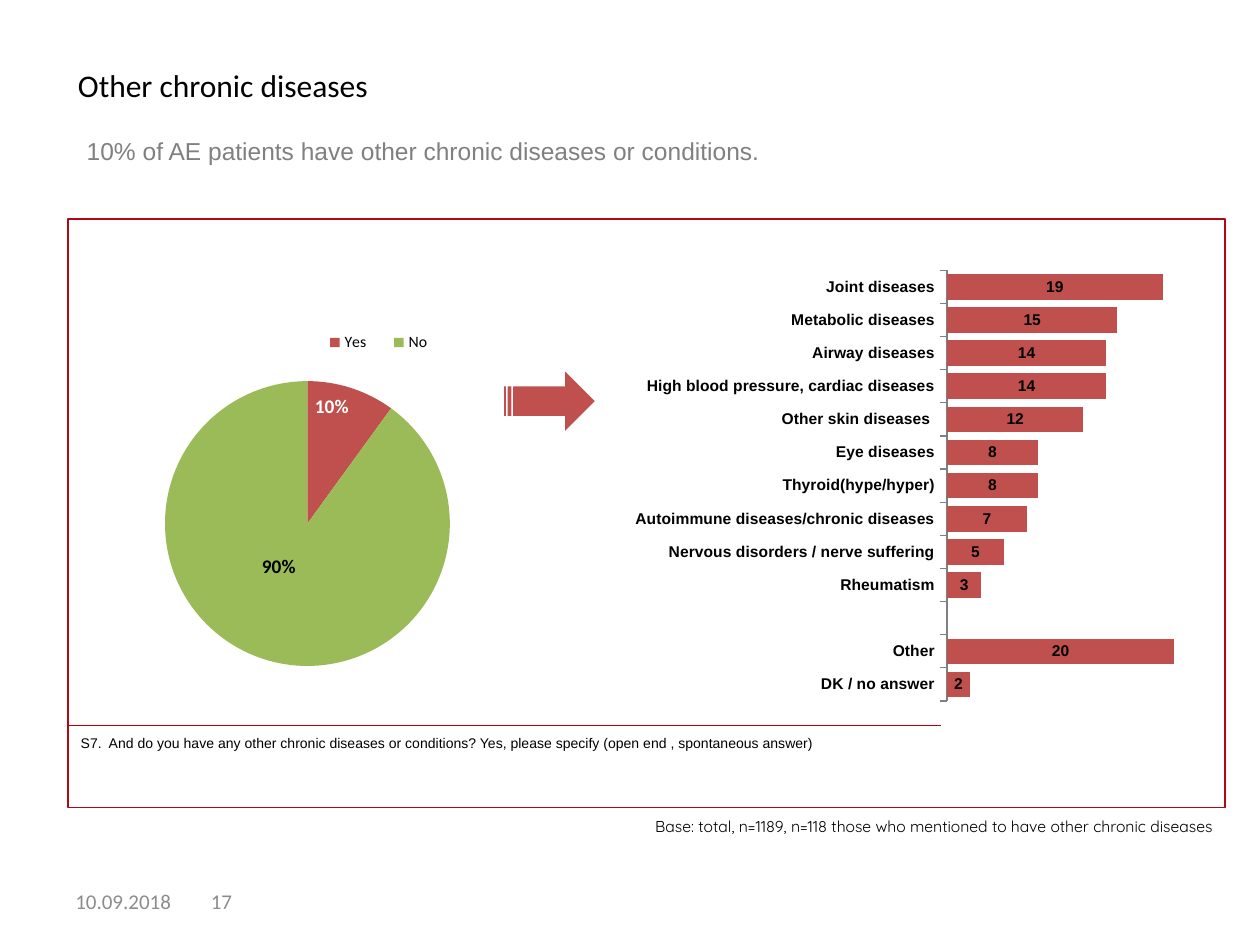
"""Build the slide on other chronic diseases: a pie of shares and a bar ranking."""
import pptx
import pptx.util
import pptx.chart.data
import pptx.dml.color
import pptx.enum.chart
import pptx.enum.shapes
import pptx.enum.text
import pptx.oxml
import pptx.oxml.ns

Pt = pptx.util.Pt
XL = pptx.enum.chart
SHAPE = pptx.enum.shapes
ALIGN = pptx.enum.text.PP_ALIGN
ANCHOR = pptx.enum.text.MSO_ANCHOR

COLORS = {"black": "000000", "white": "FFFFFF", "grey": "808080", "footer": "8C8C8C",
          "frame": "AE0917", "rule": "C00000", "red": "C0504D", "green": "9BBB59"}

HEADING = "Other chronic diseases"
MESSAGE = "10% of AE patients have other chronic diseases or conditions."
QUESTION = ("S7.  And do you have any other chronic diseases or conditions? "
            "Yes, please specify (open end , spontaneous answer)")
BASE = "Base: total, n=1189, n=118 those who mentioned to have other chronic diseases"
DATE, PAGE = "10.09.2018", "17"
HAS_OTHER = [("Yes", 0.1, "red", "white"), ("No", 0.9, "green", "black")]
DISEASES = [("Joint diseases", 19), ("Metabolic diseases", 15), ("Airway diseases", 14),
            ("High blood pressure, cardiac diseases", 14), ("Other skin diseases ", 12),
            ("Eye diseases", 8), ("Thyroid(hype/hyper)", 8),
            ("Autoimmune diseases/chronic diseases", 7),
            ("Nervous disorders / nerve suffering", 5), ("Rheumatism", 3),
            ("", None), ("Other", 20), ("DK / no answer", 2)]

deck = pptx.Presentation()
deck.slide_width, deck.slide_height = pptx.util.Inches(10), pptx.util.Inches(7.5)
slide = deck.slides.add_slide(deck.slide_layouts[6])


def area(*percents):
    """Turn left, top, width and height in percent of the slide into lengths."""
    sides = (deck.slide_width, deck.slide_height) * 2
    return [round(side * share / 100) for side, share in zip(sides, percents)]


def rgb(name):
    return pptx.dml.color.RGBColor.from_string(COLORS[name])


def style(font, size, color="black", face=None, bold=False):
    font.size, font.bold, font.color.rgb = Pt(size), bold, rgb(color)
    if face:
        font.name = face


def add_text(text, place, size, face="Calibri", color="black", align=ALIGN.LEFT,
             anchor=ANCHOR.TOP, inset=(7.2, 3.6), indent=0):
    frame = slide.shapes.add_textbox(*area(*place)).text_frame
    frame.word_wrap, frame.vertical_anchor = True, anchor
    frame.margin_left = frame.margin_right = Pt(inset[0])
    frame.margin_top = frame.margin_bottom = Pt(inset[1])
    line = frame.paragraphs[0]
    line.alignment = align
    if indent:
        line._p.get_or_add_pPr().set("marL", str(Pt(indent)))
    run = line.add_run()
    run.text = text
    style(run.font, size, color, face)


def add_chart(kind, place, rows, number_format, size, face, bold=False):
    data = pptx.chart.data.CategoryChartData(number_format=number_format)
    data.categories = [row[0] for row in rows]
    data.add_series("Series 1", [row[1] for row in rows])
    chart = slide.shapes.add_chart(kind, *area(*place), data).chart
    chart.has_title = chart.has_legend = False
    style(chart.font, size, face=face, bold=bold)
    return chart


def set_layout(parent, index, target=None, **shares):
    """Give a chart part a manual layout in shares of the chart."""
    for old in parent.findall(pptx.oxml.ns.qn("c:layout")):
        parent.remove(old)
    tags = f'<c:layoutTarget val="{target}"/>' if target else ""
    if "w" in shares:
        tags += '<c:xMode val="edge"/><c:yMode val="edge"/>'
    tags += "".join(f'<c:{key} val="{share}"/>' for key, share in shares.items())
    parent.insert(index, pptx.oxml.parse_xml(
        f'<c:layout {pptx.oxml.ns.nsdecls("c")}><c:manualLayout>{tags}'
        '</c:manualLayout></c:layout>'))


def find(chart, query):
    return chart.element.xpath(query)[0]


pie = add_chart(XL.XL_CHART_TYPE.PIE, (8.7, 30, 31.4, 43.07), HAS_OTHER, "0%", 18, "Calibri")
pie.has_legend = True
pie.legend.position, pie.legend.include_in_layout = XL.XL_LEGEND_POSITION.TOP, False
style(pie.legend.font, 9, face="Calibri")
shares = pie.plots[0].series[0]
labels = shares.data_labels
labels.show_value, labels.position = True, XL.XL_LABEL_POSITION.INSIDE_END
labels.number_format, labels.number_format_is_linked = "0%", False
style(labels.font, 11, face="Calibri", bold=True)
for number, (_, _, slice_color, label_color) in enumerate(HAS_OTHER):
    point = shares.points[number]
    point.format.fill.solid()
    point.format.fill.fore_color.rgb = rgb(slice_color)
    style(point.data_label.font, 11, label_color, "Calibri", True)
    point.data_label.position = XL.XL_LABEL_POSITION.INSIDE_END
set_layout(find(pie, ".//c:plotArea"), 0, "inner", x=0, y=0.24, w=1, h=0.7)
set_layout(find(pie, ".//c:legend"), 1, x=0.5, y=0.11, w=0.36, h=0.07)
set_layout(find(pie, ".//c:dLbl[c:idx/@val='1']"), 1, x=-0.01, y=-0.18)

add_text(PAGE, (14.2, 92.67, 5.2, 5.33), 12, color="footer", align=ALIGN.RIGHT,
         anchor=ANCHOR.MIDDLE)
border = slide.shapes.add_shape(SHAPE.MSO_SHAPE.RECTANGLE, *area(5.4, 23.2, 91.8, 62.27))
border.shadow.inherit = False
border.fill.background()
border.line.color.rgb, border.line.width = rgb("frame"), Pt(1)

add_text(HEADING, (5.2, 6.13, 89.8, 5.73), 18, align=ALIGN.JUSTIFY, anchor=ANCHOR.MIDDLE)
add_text(QUESTION, (5.2, 76.93, 75.1, 3.33), 8, "Arial", inset=(8.64, 4.32))
rule = slide.shapes.add_connector(SHAPE.MSO_CONNECTOR.STRAIGHT, *area(5.3, 76.8, 74.7, 76.8))
rule.line.color.rgb, rule.line.width = rgb("rule"), Pt(0.75)
rule._element.spPr.append(pptx.oxml.parse_xml(f'<a:effectLst {pptx.oxml.ns.nsdecls("a")}/>'))
add_text(MESSAGE, (5.4, 13.73, 89, 7.87), 14, "Arial", "grey", indent=3.6)
add_text(DATE, (5, 92.67, 23.3, 5.33), 12, color="footer", anchor=ANCHOR.MIDDLE)
add_text(BASE, (44.5, 85.6, 52.9, 3.6), 9, "Quicksand", align=ALIGN.RIGHT, inset=(8.64, 4.32))

ranking = add_chart(XL.XL_CHART_TYPE.BAR_CLUSTERED, (46.5, 28.53, 51.2, 46.13), DISEASES,
                    "General", 8.9, "Arial", True)
bars = ranking.plots[0]
bars.gap_width, bars.vary_by_categories = 30, False
mentions = bars.series[0]
mentions.format.fill.solid()
mentions.format.fill.fore_color.rgb = rgb("red")
mentions.data_labels.show_value = True
mentions.data_labels.position = XL.XL_LABEL_POSITION.CENTER
style(mentions.data_labels.font, 8.9, face="Arial", bold=True)
names, scale = ranking.category_axis, ranking.value_axis
names.reverse_order, names.has_major_gridlines = True, False
names.major_tick_mark = XL.XL_TICK_MARK.OUTSIDE
names.format.line.color.rgb = rgb("grey")
scale.visible = scale.has_major_gridlines = False
scale.minimum_scale, scale.maximum_scale = 0, 25
set_layout(find(ranking, ".//c:plotArea"), 0, "inner", x=0.62, y=0, w=0.44, h=0.99)

arrow = slide.shapes.add_shape(SHAPE.MSO_SHAPE.STRIPED_RIGHT_ARROW, *area(40, 39.33, 7.2, 6.27))
arrow.shadow.inherit = False
arrow.fill.solid()
arrow.fill.fore_color.rgb = rgb("red")
arrow.line.fill.background()

deck.save("out.pptx")
